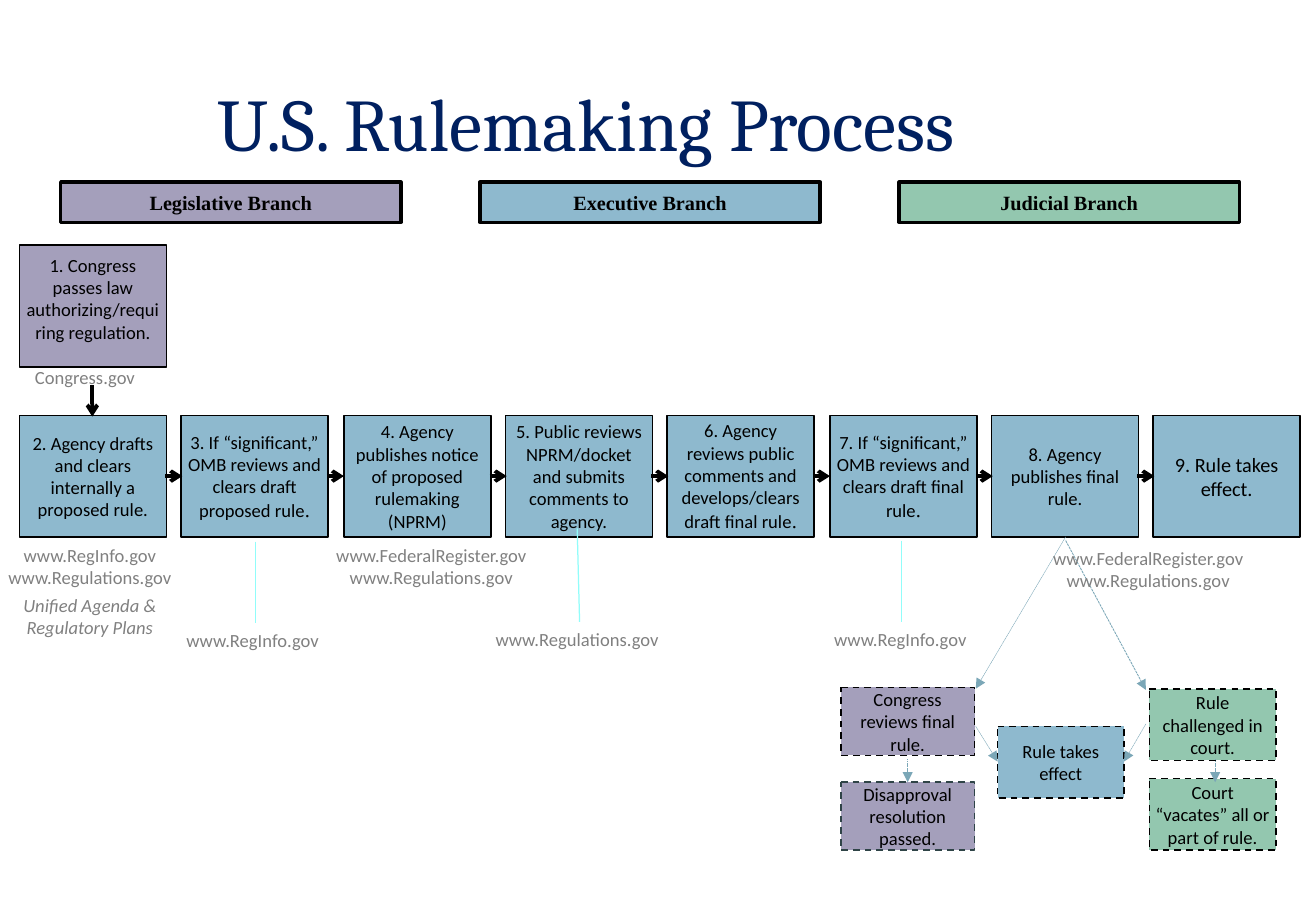
from dataclasses import dataclass

import lxml.etree
import pptx
import pptx.dml.color
import pptx.enum.dml
import pptx.enum.shapes
import pptx.enum.text
import pptx.oxml.ns
import pptx.slide
import pptx.text.text
import pptx.util

EMU_PER_PX = 9144  # 100 px to the inch

PURPLE, BLUE, GREEN = "A49FBB", "8EB9CE", "93C7AF"
BLACK, GREY, NAVY = "000000", "808080", "002060"
STEEL, AQUA = "7BA7B7", "91FDFA"
BODY, HEADING, SERIF = "Calibri", "Cambria", "Times New Roman"

STEP_LEFT, STEP_TOP, STEP_WIDTH, STEP_HEIGHT = 16, 342, 121, 100
STEP_PITCH = 400 / 3
BRANCH_LEFT, BRANCH_PITCH = 50, 345


@dataclass(frozen=True)
class Box:
    left: int
    top: int
    width: int
    height: int
    fill: str
    text: str
    size: int = 11
    font: str = BODY
    bold: bool = False
    outline: str = BLACK
    weight: float = 1
    dashed: bool = False
    bottom_inset: int = 0
    serif_stop: bool = False


@dataclass(frozen=True)
class Label:
    left: int
    top: int
    width: int
    height: int
    lines: tuple[str, ...]
    italic_lines: tuple[str, ...] = ()


@dataclass(frozen=True)
class Link:
    x1: int
    y1: int
    x2: int
    y2: int
    color: str = STEEL
    weight: float = 0.25
    dashed: bool = True
    head: str = "triangle"


def px(length: int) -> pptx.util.Emu:
    return pptx.util.Emu(length * EMU_PER_PX)


def rgb(color: str) -> pptx.dml.color.RGBColor:
    return pptx.dml.color.RGBColor.from_string(color)


def add_run(paragraph, text: str, *, size: float, font: str, color: str,
            bold: bool, italic: bool) -> None:
    run = paragraph.add_run()
    run.text = text
    run.font.size = pptx.util.Pt(size)
    run.font.name = font
    run.font.color.rgb = rgb(color)
    run.font.bold = bold
    run.font.italic = italic


def write(frame: pptx.text.text.TextFrame, text: str, *, size: float = 11,
          font: str = BODY, color: str = BLACK, bold: bool = False,
          italic: bool = False, serif_stop: bool = False,
          space_after: float = 0, more: bool = False) -> None:
    """Write one centred paragraph; more=True adds it after the earlier ones."""
    paragraph = frame.add_paragraph() if more else frame.paragraphs[0]
    paragraph.alignment = pptx.enum.text.PP_ALIGN.CENTER
    paragraph.space_after = pptx.util.Pt(space_after)
    style = {"color": color, "bold": bold, "italic": italic}
    body = text.removesuffix(".") if serif_stop else text
    add_run(paragraph, body, size=size, font=font, **style)
    if serif_stop:
        add_run(paragraph, ".", size=12, font=SERIF, **style)


def set_frame(frame: pptx.text.text.TextFrame, *, side: int = 5, top: int = 0,
              bottom: int = 0, middle: bool = True) -> None:
    anchor = pptx.enum.text.MSO_ANCHOR
    frame.word_wrap = True
    frame.vertical_anchor = anchor.MIDDLE if middle else anchor.TOP
    frame.margin_left = frame.margin_right = px(side)
    frame.margin_top, frame.margin_bottom = px(top), px(bottom)


def draw_box(slide: pptx.slide.Slide, box: Box) -> None:
    shape = slide.shapes.add_shape(
        pptx.enum.shapes.MSO_SHAPE.FLOWCHART_PROCESS,
        px(box.left), px(box.top), px(box.width), px(box.height))
    shape.shadow.inherit = False
    shape.fill.solid()
    shape.fill.fore_color.rgb = rgb(box.fill)
    shape.line.color.rgb = rgb(box.outline)
    shape.line.width = pptx.util.Pt(box.weight)
    if box.dashed:
        shape.line.dash_style = pptx.enum.dml.MSO_LINE.DASH
    set_frame(shape.text_frame, bottom=box.bottom_inset)
    write(shape.text_frame, box.text, size=box.size, font=box.font,
          bold=box.bold, serif_stop=box.serif_stop)


def draw_label(slide: pptx.slide.Slide, label: Label) -> None:
    frame = slide.shapes.add_textbox(
        px(label.left), px(label.top), px(label.width), px(label.height)).text_frame
    set_frame(frame, top=5, bottom=5, middle=False)
    for i, line in enumerate(label.lines):
        last_upright = label.italic_lines and i == len(label.lines) - 1
        write(frame, line, color=GREY, more=i > 0, space_after=3 if last_upright else 0)
    for line in label.italic_lines:
        write(frame, line, color=GREY, italic=True, more=True)


def draw_link(slide: pptx.slide.Slide, link: Link) -> None:
    connector = slide.shapes.add_connector(
        pptx.enum.shapes.MSO_CONNECTOR.STRAIGHT,
        px(link.x1), px(link.y1), px(link.x2), px(link.y2))
    connector.line.color.rgb = rgb(link.color)
    connector.line.width = pptx.util.Pt(link.weight)
    if link.dashed:
        connector.line.dash_style = pptx.enum.dml.MSO_LINE.SQUARE_DOT
    qn = pptx.oxml.ns.qn
    properties = connector.element.find(qn("p:spPr"))
    if link.head:
        lxml.etree.SubElement(properties.find(qn("a:ln")), qn("a:tailEnd"), type=link.head)
    lxml.etree.SubElement(properties, qn("a:effectLst"))


BRANCHES = [("Legislative Branch", PURPLE), ("Executive Branch", BLUE),
            ("Judicial Branch", GREEN)]

AGENCY_STEPS = [
    "2. Agency drafts and clears internally a proposed rule.",
    "3. If “significant,” OMB reviews and clears draft proposed rule.",
    "4. Agency publishes notice of proposed rulemaking (NPRM)",
    "5. Public reviews NPRM/docket and submits comments to agency.",
    "6. Agency reviews public comments and develops/clears draft final rule.",
    "7. If “significant,” OMB reviews and clears draft final rule.",
    "8. Agency publishes final rule.",
    "9. Rule takes effect.",
]
SERIF_STOP_STEPS = (3, 6, 7)

FIRST_STEP = Box(STEP_LEFT, 202, STEP_WIDTH, STEP_HEIGHT, PURPLE,
                 "1. Congress passes law authorizing/requiring regulation.", bottom_inset=13)

OUTCOMES = [
    Box(692, 566, 110, 56, PURPLE, "Congress reviews final rule.", dashed=True),
    Box(692, 644, 110, 56, PURPLE, "Disapproval resolution passed.",
        outline="2F4447", dashed=True),
    Box(821, 598, 104, 59, BLUE, "Rule takes effect", dashed=True),
    Box(946, 567, 104, 59, GREEN, "Rule challenged in court.", dashed=True),
    Box(946, 641, 104, 59, GREEN, "Court “vacates” all or part of rule.", dashed=True),
]

OUTCOME_LINKS = [
    Link(877, 445, 943, 568, weight=0.5),
    Link(877, 442, 803, 567),
    Link(747, 625, 747, 644),
    Link(803, 598, 821, 627),
    Link(943, 596, 925, 627),
    Link(1000, 625, 1000, 644),
]

SITE_LINES = [Link(x1, y1, x2, y2, AQUA, 0.75, False, "") for x1, y1, x2, y2 in
              [(210, 446, 210, 513), (475, 435, 477, 512), (742, 445, 742, 512)]]

REGISTER_SITES = ("www.FederalRegister.gov", "www.Regulations.gov")
SITES = [
    Label(15, 296, 110, 29, ("Congress.gov",)),
    Label(0, 443, 148, 88, ("www.RegInfo.gov", "www.Regulations.gov"),
          ("Unified Agenda &", "Regulatory Plans")),
    Label(228, 443, 254, 47, REGISTER_SITES),
    Label(808, 445, 280 - 6, 47, REGISTER_SITES),
    Label(68, 513, 280, 29, ("www.RegInfo.gov",)),
    Label(335, 512, 280, 29, ("www.Regulations.gov",)),
    Label(601, 512, 280, 29, ("www.RegInfo.gov",)),
]


def main() -> None:
    presentation = pptx.Presentation()
    presentation.slide_width, presentation.slide_height = px(1083), px(750)
    slide = presentation.slides.add_slide(presentation.slide_layouts[6])

    # Title
    title = slide.shapes.add_textbox(px(22), px(67), px(921), px(67)).text_frame
    set_frame(title)
    write(title, "U.S. Rulemaking Process", size=44, font=HEADING, color=NAVY)

    # Branch key
    for i, (branch, color) in enumerate(BRANCHES):
        draw_box(slide, Box(BRANCH_LEFT + i * BRANCH_PITCH, 150, 280, 33, color, branch,
                            size=12, font=SERIF, bold=True, weight=2))

    # Numbered steps
    draw_box(slide, FIRST_STEP)
    step_lefts = [STEP_LEFT + round(i * STEP_PITCH) for i in range(len(AGENCY_STEPS))]
    for number, (left, text) in enumerate(zip(step_lefts, AGENCY_STEPS), start=2):
        draw_box(slide, Box(left, STEP_TOP, STEP_WIDTH, STEP_HEIGHT, BLUE, text,
                            size=12 if number == 9 else 11,
                            serif_stop=number in SERIF_STOP_STEPS))

    # Outcomes after the final rule
    for outcome in OUTCOMES:
        draw_box(slide, outcome)
    for link in OUTCOME_LINKS + SITE_LINES:
        draw_link(slide, link)

    # Web sites
    for site in SITES:
        draw_label(slide, site)

    # Arrows from step to step
    draw_link(slide, Link(76, 317, 76, 343, BLACK, 2.25, False, "arrow"))
    for left in step_lefts[:-1]:
        right = left + STEP_WIDTH - 1
        draw_link(slide, Link(right, 392, right + 14, 392, BLACK, 2.25, False, "arrow"))

    presentation.save("out.pptx")


if __name__ == "__main__":
    main()
